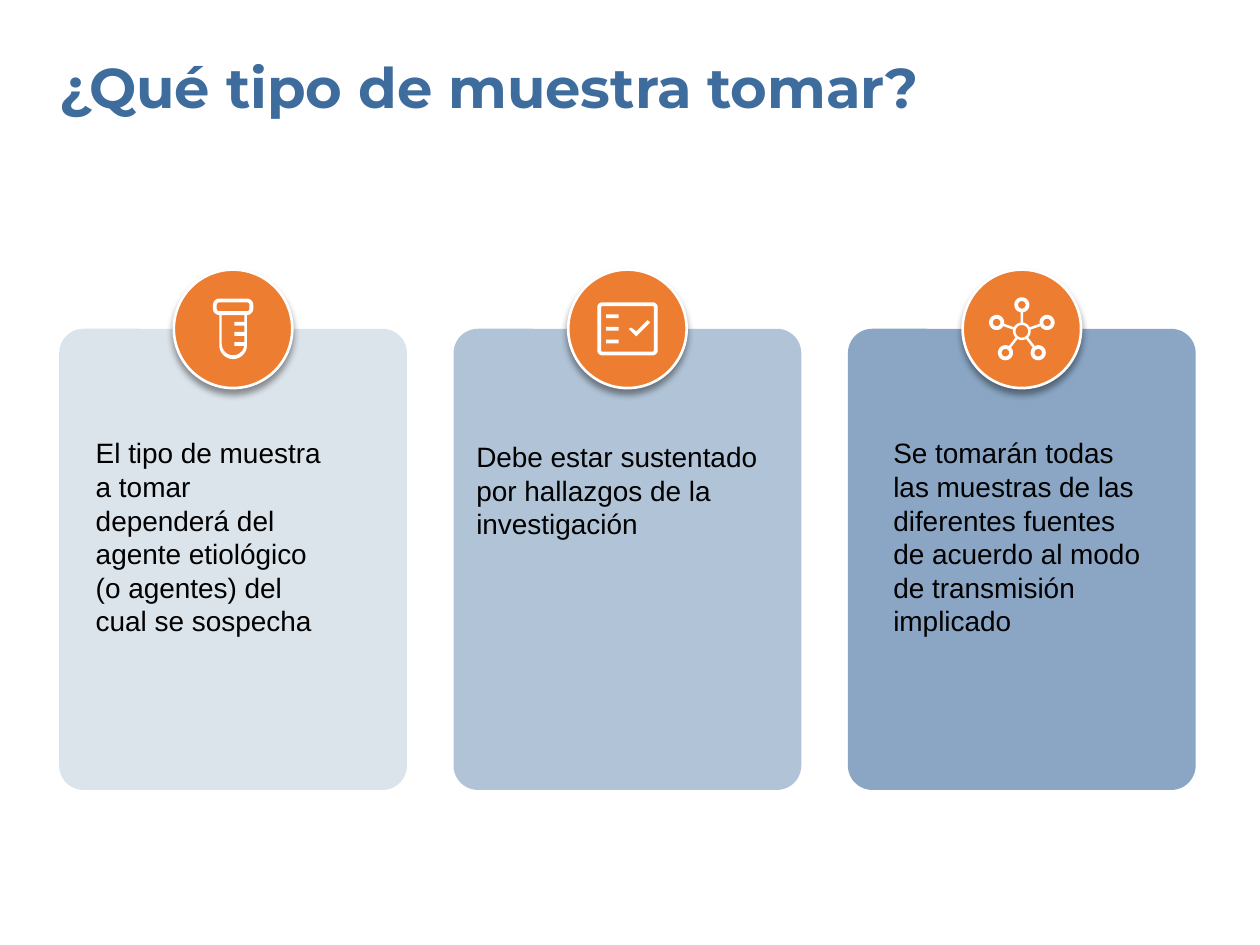
from dataclasses import dataclass
from math import cos, hypot, pi, sin

from lxml.etree import SubElement
from pptx import Presentation
from pptx.dml.color import RGBColor
from pptx.enum.shapes import MSO_SHAPE
from pptx.enum.text import MSO_ANCHOR, MSO_AUTO_SIZE, PP_ALIGN
from pptx.oxml.ns import qn
from pptx.util import Inches, Pt


@dataclass(frozen=True)
class Theme:
    blue: str = "3D6C9D"
    pale: str = "DBE4EB"
    orange: str = "ED7D31"
    white: str = "FFFFFF"
    black: str = "000000"
    title_font: str = "Montserrat"
    body_font: str = "Arial"
    title_size: int = 32
    body_size: int = 16


THEME = Theme()
TITLE = "¿Qué tipo de muestra tomar?"

# text, (inset, top, width), fill, opacity in percent, icon
CARDS = [
    ("El tipo de muestra a tomar dependerá del agente etiológico "
     "(o agentes) del cual se sospecha",
     (0.29, 3.46, 1.81), THEME.pale, 100, "tube"),
    ("Debe estar sustentado por hallazgos de la investigación",
     (0.18, 3.49, 2.45), THEME.blue, 40, "checklist"),
    ("Se tomarán todas las muestras de las diferentes fuentes "
     "de acuerdo al modo de transmisión implicado",
     (0.36, 3.46, 2.04), THEME.blue, 60, "network"),
]

SLIDE_W, SLIDE_H = 10, 7.5
MARGIN, GAP = 0.47, 0.37
CARD_W, CARD_H, CARD_TOP = 2.76, 3.66, 2.61
BADGE = 0.94


def rounded(left, top, right, bottom, r_top=0, r_bottom=None):
    """Outline of a box whose top and bottom corners have their own radii."""
    r_bottom = r_top if r_bottom is None else r_bottom
    corners = [(right - r_bottom, bottom - r_bottom, r_bottom),
               (left + r_bottom, bottom - r_bottom, r_bottom),
               (left + r_top, top + r_top, r_top),
               (right - r_top, top + r_top, r_top)]
    points = []
    for quarter, (x, y, r) in enumerate(corners):
        steps = 8 if r else 0
        for i in range(steps + 1):
            a = (quarter + i / max(steps, 1)) * pi / 2
            points.append((x + r * cos(a), y + r * sin(a)))
    return points


def ring(x, y, outer, inner):
    return [rounded(x - r, y - r, x + r, y + r, r) for r in (outer, inner)]


def spoke(start, end, r_start, r_end, half=0.01):
    """Bar between the rims of two circles."""
    (x1, y1), (x2, y2) = start, end
    length = hypot(x2 - x1, y2 - y1)
    ux, uy = (x2 - x1) / length, (y2 - y1) / length
    ax, ay = x1 + ux * r_start, y1 + uy * r_start
    bx, by = x2 - ux * r_end, y2 - uy * r_end
    nx, ny = -uy * half, ux * half
    return [(ax + nx, ay + ny), (bx + nx, by + ny),
            (bx - nx, by - ny), (ax - nx, ay - ny)]


def bars(left, right, centres, half=0.015):
    return [rounded(left, y - half, right, y + half) for y in centres]


def tube():
    return [rounded(-0.16, -0.24, 0.16, -0.11, 0.05),
            rounded(-0.13, -0.21, 0.13, -0.14, 0.02),
            rounded(-0.11, -0.11, 0.11, 0.24, 0, 0.11),
            rounded(-0.09, -0.11, 0.09, 0.21, 0, 0.09),
            *bars(0.01, 0.09, (-0.04, 0.04, 0.12))]


def checklist():
    check = [(0.07, 0.06), (0.18, -0.05), (0.16, -0.07),
             (0.07, 0.02), (0.03, -0.01), (0.01, 0)]
    return [rounded(-0.24, -0.21, 0.24, 0.21, 0.04),
            rounded(-0.21, -0.18, 0.21, 0.18, 0.01),
            check, *bars(-0.17, -0.07, (-0.1, 0, 0.1))]


def network():
    hub, r_hub, r_node = (0, 0.02), 0.07, 0.06
    outlines = ring(*hub, r_hub, 0.05)
    for node in [(0, -0.19), (-0.2, -0.05), (0.2, -0.05),
                 (-0.13, 0.19), (0.13, 0.19)]:
        outlines += ring(*node, r_node, 0.03)
        outlines.append(spoke(hub, node, r_hub, r_node))
    return outlines


ICONS = {"tube": tube, "checklist": checklist, "network": network}


def paint(sp, color, opacity=100):
    sp.shadow.inherit = False
    sp.fill.solid()
    sp.fill.fore_color.rgb = RGBColor.from_string(color)
    sp.line.fill.background()
    if opacity < 100:
        clr = sp.fill._xPr.find(qn("a:solidFill"))[0]
        SubElement(clr, qn("a:alpha"), val=str(opacity * 1000))


def add_badge(s, x, y):
    sp = s.shapes.add_shape(MSO_SHAPE.OVAL, Inches(x - BADGE / 2),
                            Inches(y - BADGE / 2), Inches(BADGE), Inches(BADGE))
    paint(sp, THEME.orange)
    sp.line.color.rgb = RGBColor.from_string(THEME.white)
    sp.line.width = Pt(1.5)
    effects = sp._element.spPr.find(qn("a:effectLst"))
    shadow = SubElement(effects, qn("a:outerShdw"), blurRad=str(Pt(4)),
                        dist=str(Pt(3)), dir=str(90 * 60000), rotWithShape="0")
    clr = SubElement(shadow, qn("a:srgbClr"), val=THEME.black)
    SubElement(clr, qn("a:alpha"), val="40000")


def add_icon(s, name, x, y):
    outlines = [[(Inches(x + px), Inches(y + py)) for px, py in outline]
                for outline in ICONS[name]()]
    builder = s.shapes.build_freeform(*outlines[0][0])
    for i, (first, *rest) in enumerate(outlines):
        if i:
            builder.move_to(*first)
        builder.add_line_segments(rest, close=True)
    paint(builder.convert_to_shape(), THEME.white)


def write(sp, text, font, size, color, bold=False):
    tf = sp.text_frame
    tf.word_wrap = True
    tf.auto_size = MSO_AUTO_SIZE.SHAPE_TO_FIT_TEXT
    tf.vertical_anchor = MSO_ANCHOR.TOP
    tf.margin_left = tf.margin_top = tf.margin_right = tf.margin_bottom = 0
    p = tf.paragraphs[0]
    p.alignment = PP_ALIGN.LEFT
    r = p.add_run()
    r.text = text
    r.font.name, r.font.size, r.font.bold = font, Pt(size), bold
    r.font.color.rgb = RGBColor.from_string(color)


def main():
    prs = Presentation()
    prs.slide_width, prs.slide_height = Inches(SLIDE_W), Inches(SLIDE_H)
    s = prs.slides.add_slide(prs.slide_layouts[5])

    title = s.shapes.title
    title.left, title.top = Inches(MARGIN), Inches(0.42)
    title.width, title.height = Inches(8.55), Inches(0.54)
    write(title, TITLE, THEME.title_font, THEME.title_size, THEME.blue, True)

    for col, (text, (inset, top, width), fill, opacity, icon) in enumerate(CARDS):
        left = MARGIN + col * (CARD_W + GAP)
        middle = left + CARD_W / 2
        card = s.shapes.add_shape(MSO_SHAPE.ROUNDED_RECTANGLE, Inches(left),
                                  Inches(CARD_TOP), Inches(CARD_W), Inches(CARD_H))
        card.adjustments[0] = 0.07
        paint(card, fill, opacity)
        add_badge(s, middle, CARD_TOP)
        lines = 3 if icon == "checklist" else 6
        box = s.shapes.add_textbox(Inches(left + inset), Inches(top),
                                   Inches(width), Inches(lines * 0.27))
        write(box, text, THEME.body_font, THEME.body_size, THEME.black)
        add_icon(s, icon, middle, CARD_TOP)

    prs.save("out.pptx")


if __name__ == "__main__":
    main()
